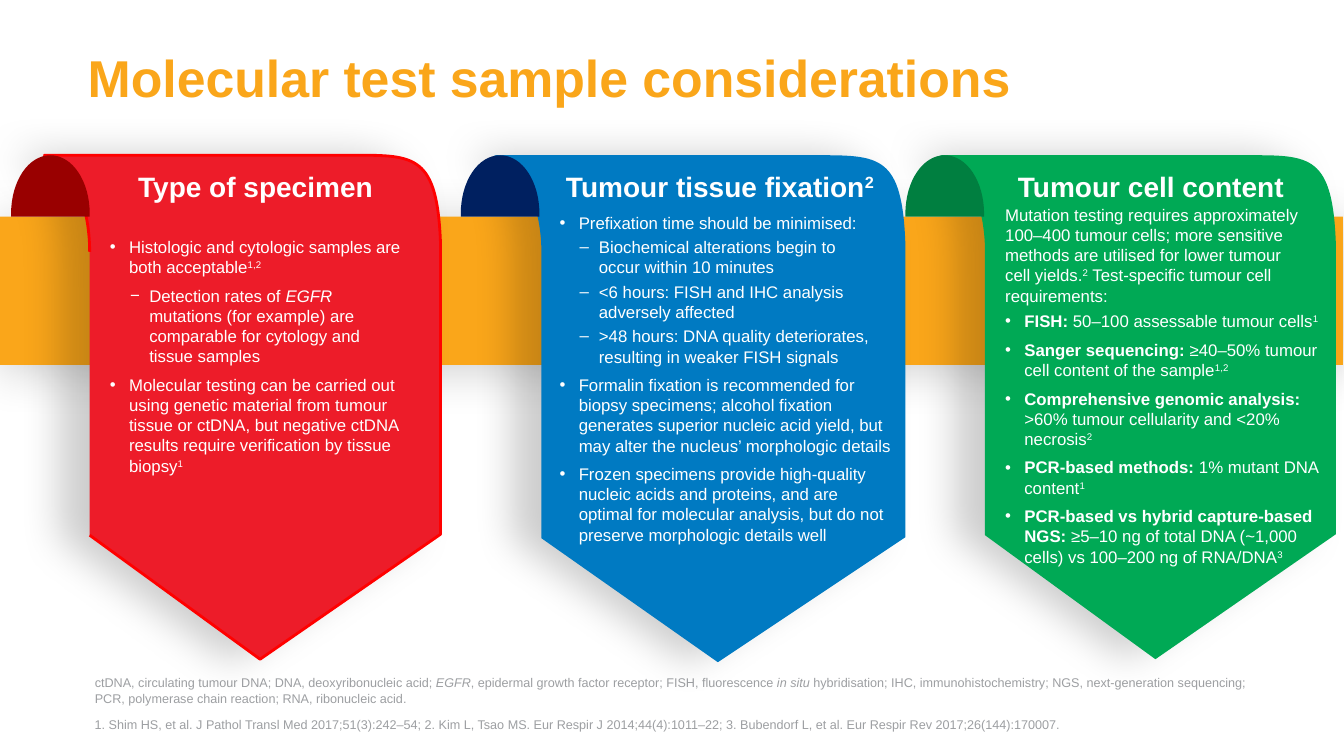
from lxml import etree
from pptx import Presentation
from pptx.dml.color import RGBColor
from pptx.enum.shapes import MSO_SHAPE
from pptx.enum.text import MSO_ANCHOR, MSO_AUTO_SIZE, PP_ALIGN
from pptx.oxml.ns import qn
from pptx.util import Pt

RECT = MSO_SHAPE.RECTANGLE
TOP, MIDDLE = MSO_ANCHOR.TOP, MSO_ANCHOR.MIDDLE
LEFT, CENTER = PP_ALIGN.LEFT, PP_ALIGN.CENTER
NO_FIT = MSO_AUTO_SIZE.NONE
PX = 9144  # 100 px to the inch
ORANGE, GREY, WHITE = "FAA61A", "9D9FA2", "FFFFFF"

# ---- Content: a run is (text, style); styles are b, i and sup ----
TITLE = "Molecular test sample considerations"
ABBREVIATIONS = [
    ("ctDNA, circulating tumour DNA; DNA, deoxyribonucleic acid; ", ""), ("EGFR", "i"),
    (", epidermal growth factor receptor; FISH, fluorescence ", ""), ("in situ ", "i"),
    ("hybridisation; IHC, immunohistochemistry; NGS, next-generation sequencing; \n"
     "PCR, polymerase chain reaction; RNA, ribonucleic acid.", "")]
REFERENCES = [(
    "1. Shim HS, et al. J Pathol Transl Med 2017;51(3):242–54; "
    "2. Kim L, Tsao MS. Eur Respir J 2014;44(4):1011–22; "
    "3. Bubendorf L, et al. Eur Respir Rev 2017;26(144):170007.", "")]

# Paragraph kinds: bullet, left margin px, hanging px, space before pt
POINT = ("•", 19, 19, 6)
MINUS = ("−", 39, 19, 6)
DASH = ("–", 39, 19, 3)
INTRO = (None, 6, 0, 4)
FIRST_TEST = ("•", 25, 19, 4)
TEST = ("•", 25, 19, 6)
PLAIN = (None, 0, 0, 0)

SPECIMEN = [
    (POINT, [("Histologic and cytologic samples are both acceptable", ""), ("1,2", "sup")]),
    (MINUS, [("Detection rates of ", ""), ("EGFR ", "i"),
             ("mutations (for example) are comparable for cytology and tissue samples", "")]),
    (POINT, [("Molecular testing can be carried out using genetic material from tumour tissue "
              "or ctDNA, but negative ctDNA results require verification by tissue biopsy", ""),
             ("1", "sup")]),
]
FIXATION = [
    (POINT, [("Prefixation time should be minimised:", "")]),
    (DASH, [("Biochemical alterations begin to \noccur within 10 minutes", "")]),
    (DASH, [("<6 hours: FISH and IHC analysis adversely affected", "")]),
    (DASH, [(">48 hours: DNA quality deteriorates, resulting in weaker FISH signals", "")]),
    (POINT, [("Formalin fixation is recommended for biopsy specimens; alcohol fixation generates "
              "superior nucleic acid yield, but may alter the nucleus’ morphologic details", "")]),
    (POINT, [("Frozen specimens provide high-quality nucleic acids and proteins, and are optimal "
              "for molecular analysis, but do not preserve morphologic details well", "")]),
]
CELL_CONTENT = [
    (INTRO, [("Mutation testing requires approximately 100–400 tumour cells; more sensitive "
              "methods are utilised for lower tumour \ncell yields.", ""), ("2", "sup"),
             (" Test-specific tumour cell requirements:", "")]),
    (FIRST_TEST, [("FISH: ", "b"), ("50–100 assessable tumour cells", ""), ("1", "sup")]),
    (TEST, [("Sanger sequencing: ", "b"), ("≥40–50% tumour cell content of the sample", ""),
            ("1,2", "sup")]),
    (TEST, [("Comprehensive genomic analysis: ", "b"),
            (">60% tumour cellularity and <20% necrosis", ""), ("2", "sup")]),
    (TEST, [("PCR-based methods: ", "b"), ("1% mutant DNA content", ""), ("1", "sup")]),
    (TEST, [("PCR-based vs hybrid capture-based NGS: ", "b"),
            ("≥5–10 ng of total DNA (~1,000 cells) vs 100–200 ng of RNA/DNA", ""), ("3", "sup")]),
]

# x = (fold start, left edge, tip, shoulder, right edge); base = y of the left corner
BANNERS = [
    dict(heading=[("Type of specimen", "b")], heading_box=(99, 158, 309, 64),
         points=SPECIMEN, points_box=(99, 225, 309, 134), x=(44, 89, 258, 352, 437),
         base=531, curl=11, fill="ED1C29", dark="990000", outline="FF0000"),
    dict(heading=[("Tumour tissue fixation", "b"), ("2", "b sup")],
         heading_box=(545, 158, 338, 64),
         points=FIXATION, points_box=(545, 201, 353, 342), x=(490, 537, 712, 810, 898),
         base=534, curl=457, fill="007AC2", dark="002060", outline=None),
    dict(heading=[("Tumour cell content", "b")], heading_box=(987, 158, 309, 64),
         points=CELL_CONTENT, points_box=(981, 193, 340, 157), x=(932, 977, 1146, 1239, 1325),
         base=531, curl=898, fill="00A955", dark="007F40", outline=None),
]
BANNER_TOP, SHOULDER_Y, CURL_BOTTOM, CURL_W = 154, 243, 215, 78


def rgb(value):
    return RGBColor.from_string(value)


def place(shape, box):
    shape.left, shape.top, shape.width, shape.height = (n * PX for n in box)


def paint(shape, fill, outline=None, shadow=None):
    """Shadow is (blur pt, distance pt, direction in degrees)."""
    shape.shadow.inherit = False
    shape.fill.solid()
    shape.fill.fore_color.rgb = rgb(fill)
    if outline:
        shape.line.color.rgb = rgb(outline)
        shape.line.width = Pt(2)
    else:
        shape.line.fill.background()
    if shadow:
        blur, distance, angle = shadow
        effects = shape.element.spPr.find(qn("a:effectLst"))
        outer = etree.SubElement(effects, qn("a:outerShdw"), blurRad=str(Pt(blur)),
                                 dist=str(Pt(distance)), dir=str(angle * 60000),
                                 algn="ctr", rotWithShape="0")
        black = etree.SubElement(outer, qn("a:srgbClr"), val="000000")
        etree.SubElement(black, qn("a:alpha"), val="20000")


def write(shape, paragraphs, size, color, align=LEFT, anchor=TOP, inset=(10, 10), spacing=None):
    frame = shape.text_frame
    frame.word_wrap, frame.auto_size, frame.vertical_anchor = True, NO_FIT, anchor
    frame.margin_left = frame.margin_right = inset[0] * PX
    frame.margin_top = frame.margin_bottom = inset[1] * PX
    for n, ((bullet, margin, hang, before), runs) in enumerate(paragraphs):
        para = frame.add_paragraph() if n else frame.paragraphs[0]
        props = para._p.get_or_add_pPr()
        props.set("marL", str(margin * PX))
        props.set("indent", str(-hang * PX))
        if bullet:
            etree.SubElement(props, qn("a:buFont"), typeface="Arial")
            etree.SubElement(props, qn("a:buChar"), char=bullet)
        else:
            etree.SubElement(props, qn("a:buNone"))
        para.alignment = align
        para.space_before = Pt(before if n else 0)
        if spacing:
            para.line_spacing = spacing
        for text, style in runs:
            for k, piece in enumerate(text.split("\n")):
                if k:
                    para.add_line_break()
                run = para.add_run()
                run.text = piece
                font = run.font
                font.name, font.size, font.color.rgb = "Arial", Pt(size), rgb(color)
                font.bold, font.italic = "b" in style.split(), "i" in style.split()
                if "sup" in style:
                    font._element.set("baseline", "30000")


def draw_outline(start, segments, close):
    """A segment is (end,) for a line or (control, control, end) for a curve."""
    ends = [segment[-1] for segment in segments]
    builder = slide.shapes.build_freeform(*start, scale=PX)
    builder.add_line_segments(ends, close=close)
    shape = builder.convert_to_shape()
    left, top = (min(values) for values in zip(start, *ends))
    lines = list(shape.element.iter(qn("a:lnTo")))
    for line, segment in zip(lines, segments):
        if len(segment) == 3:
            curve = etree.Element(qn("a:cubicBezTo"))
            for x, y in segment:
                etree.SubElement(curve, qn("a:pt"), x=str(x - left), y=str(y - top))
            line.getparent().replace(line, curve)
    return shape


def draw_banner(x, base):
    fold, left, tip, shoulder, right = x
    top = BANNER_TOP
    return draw_outline((left, base), [
        ((tip, base + 123),),
        ((right, base - 1),),
        ((right, SHOULDER_Y),),
        ((right - 3, top), (right - 25, top), (shoulder, top)),
        ((fold, top),),
        ((fold + 25, top + 5), (left, 200), (left, 250)),
    ], close=False)


def draw_curl(x):
    right, mid, top, side = x + CURL_W, x + CURL_W // 2, BANNER_TOP, CURL_BOTTOM - 3
    return draw_outline((right, CURL_BOTTOM), [
        ((right, side),),
        ((right, 180), (mid + 22, top), (mid, top)),
        ((mid - 22, top), (x, 180), (x, side)),
        ((x, CURL_BOTTOM),),
    ], close=True)


prs = Presentation()
prs.slide_width, prs.slide_height = 1333 * PX, 750 * PX
slide = prs.slides.add_slide(prs.slide_layouts[4])
title, abbreviations, *lists = slide.placeholders
shapes = slide.shapes

# Title and abbreviations
place(title, (87, 40, 1008, 85))
write(title, [(PLAIN, [(TITLE, "b")])], 37, ORANGE, anchor=MIDDLE, inset=(0, 0), spacing=0.75)
place(abbreviations, (84, 665, 1176, 42))
write(abbreviations, [(PLAIN, ABBREVIATIONS)], 9, GREY, inset=(10, 5))

# Band behind the banners
band = shapes.add_shape(RECT, 0, 0, 0, 0)
place(band, (-1, 215, 1333, 147))
paint(band, ORANGE, shadow=(35, 3, 90))

# Banners, each with its curl, heading and list
for banner, points in zip(BANNERS, lists):
    paint(draw_banner(banner["x"], banner["base"]), banner["fill"], banner["outline"],
          shadow=(29, 21, 180))
    paint(draw_curl(banner["curl"]), banner["dark"])
    heading = shapes.add_textbox(0, 0, 0, 0)
    place(heading, banner["heading_box"])
    write(heading, [(PLAIN, banner["heading"])], 20, WHITE, align=CENTER)
    place(points, banner["points_box"])
    write(points, banner["points"], 12, WHITE)
    shapes.element.append(points.element)  # bring the list in front of its banner

# References
references = shapes.add_textbox(0, 0, 0, 0)
place(references, (84, 706, 1165, 61))
write(references, [(PLAIN, REFERENCES)], 9, GREY, inset=(10, 5))

prs.save("out.pptx")
